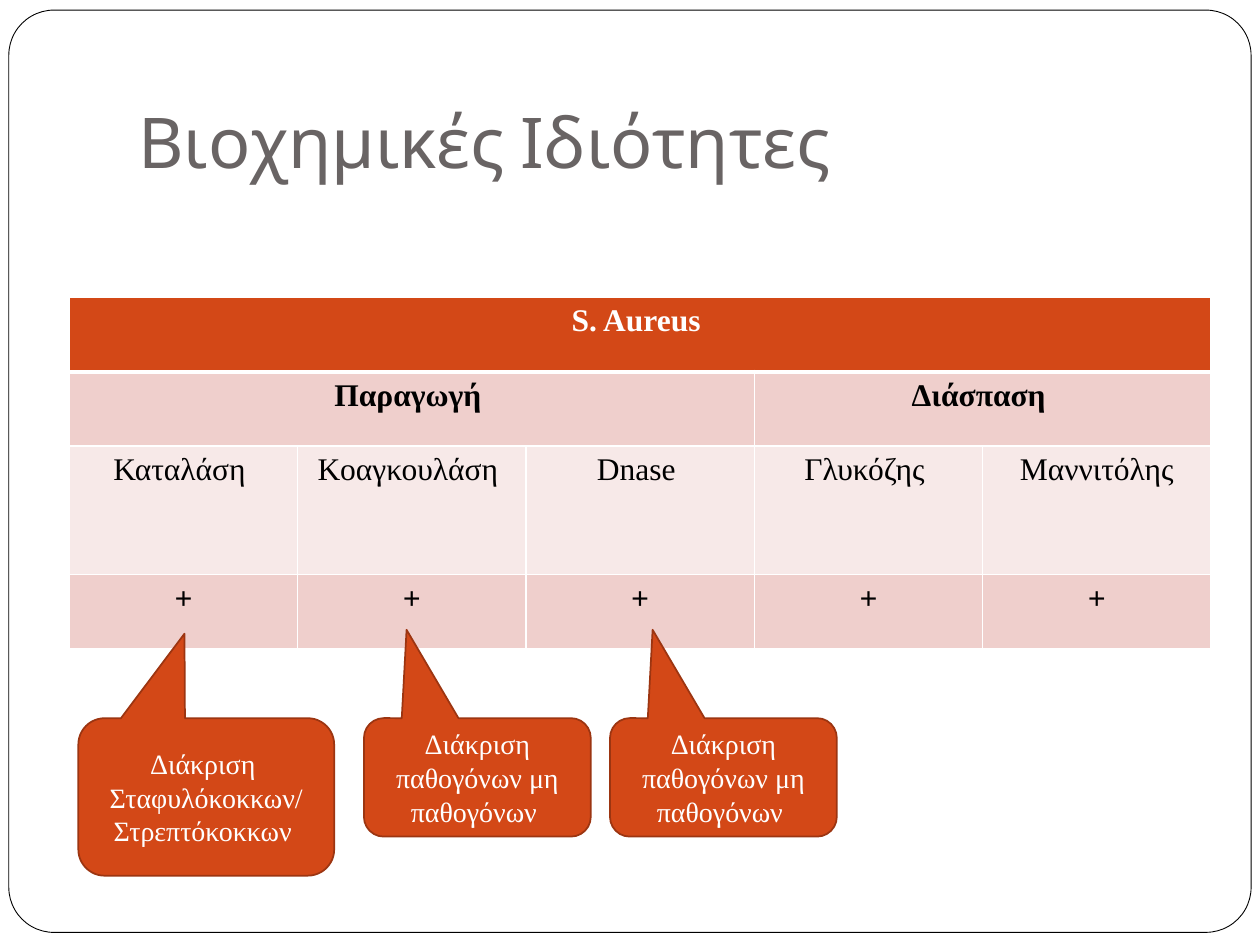
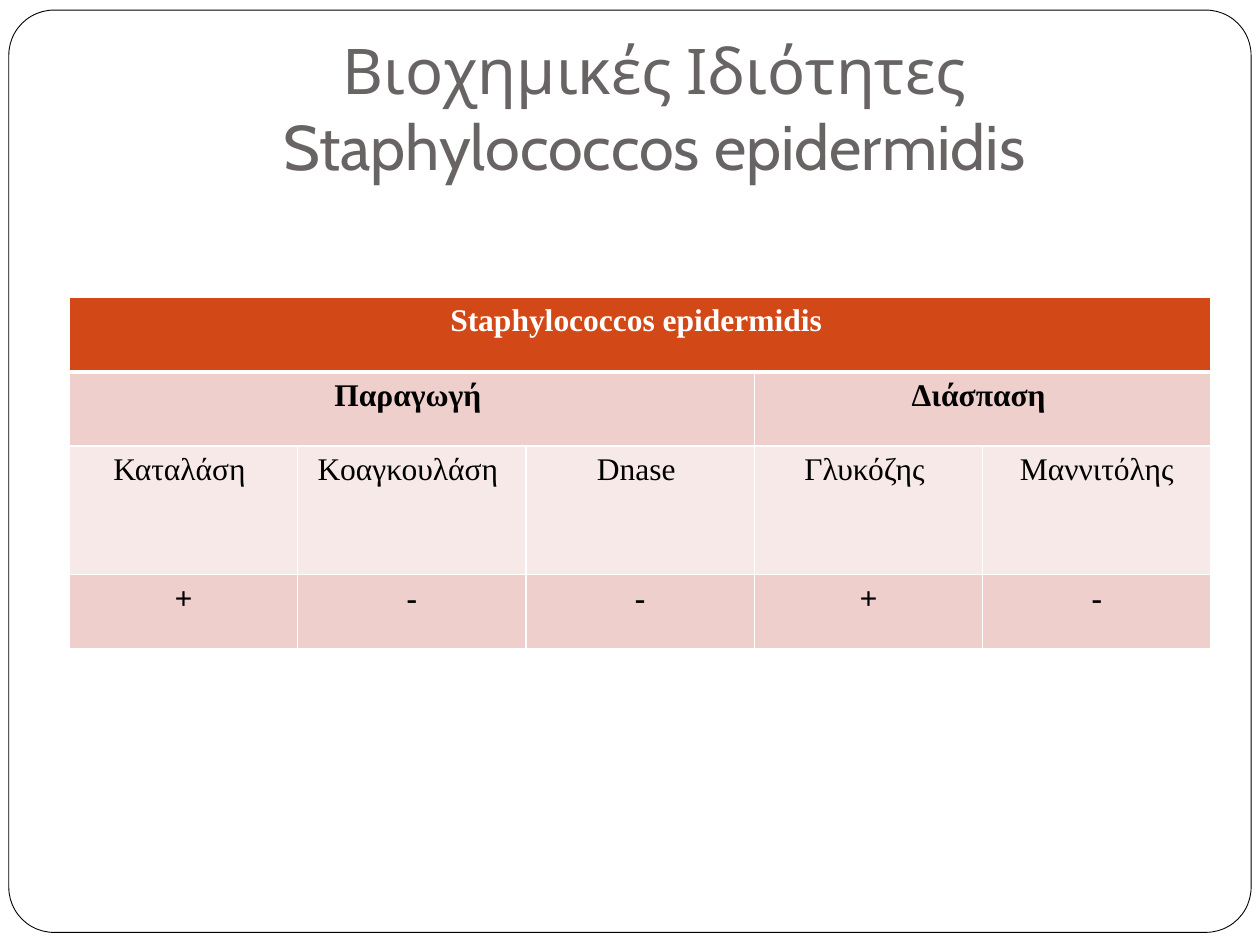
import pptx
import pptx.util
import pptx.dml.color
import pptx.enum.shapes
import pptx.enum.text
import pptx.oxml
import pptx.oxml.ns

Pt = pptx.util.Pt
ALIGN = pptx.enum.text.PP_ALIGN
ANCHOR = pptx.enum.text.MSO_ANCHOR
SHAPE = pptx.enum.shapes.MSO_SHAPE

# Shared look
HUES = {
    "white": "FFFFFF", "black": "000000", "title": "696464",
    "rust": "D34817", "edge": "9C3511", "pink": "EFCFCC", "pale": "F7E9E8",
}
HEAD, BODY = "Cabin", "Times New Roman"
FRAME = (5.04, 5.76, 709.92, 527.04)
TITLE = (72, 21.6, 612, 90)
TABLE = (39.6, 170, 652.5)
ROWS = (42.5, 42.5, 73.4, 42.5)
TESTS = ("Καταλάση ", "Κοαγκουλάση ", "Dnase ", "Γλυκόζης ", "Μαννιτόλης")


def hue(name):
    return pptx.dml.color.RGBColor.from_string(HUES[name])


def place(shape, box):
    shape.left, shape.top, shape.width, shape.height = map(Pt, box)


def write(para, text, size, color, font=BODY, bold=False, align=ALIGN.CENTER):
    """Add one run to a paragraph."""
    para.alignment = align
    run = para.add_run()
    run.text = text
    run.font.size, run.font.name, run.font.bold = Pt(size), font, bold
    run.font.color.rgb = hue(color)


def draw(slide, kind, box, fill, line, weight, adjust):
    """Add a flat preset shape."""
    shape = slide.shapes.add_shape(kind, *map(Pt, box))
    shape.shadow.inherit = False
    shape.fill.solid()
    shape.fill.fore_color.rgb = hue(fill)
    shape.line.color.rgb = hue(line)
    shape.line.width = Pt(weight)
    for i, value in enumerate(adjust):
        shape.adjustments[i] = value
    return shape


def start(deck, lines, size, align):
    """Make a slide with its frame and title."""
    slide = deck.slides.add_slide(deck.slide_layouts[5])
    title = slide.shapes.title
    frame = draw(slide, SHAPE.ROUNDED_RECTANGLE, FRAME, "white", "black", 0.5, [0.049])
    title.element.addprevious(frame.element)
    place(title, TITLE)
    text = title.text_frame
    text.auto_size = pptx.enum.text.MSO_AUTO_SIZE.NONE
    text.word_wrap = True
    text.vertical_anchor = ANCHOR.BOTTOM
    text.margin_left = text.margin_right = text.margin_bottom = Pt(7.2)
    text.margin_top = Pt(3.6)
    para = text.paragraphs[0]
    for i, line in enumerate(lines):
        if i:
            para.add_line_break()
        write(para, line, size, "title", HEAD, align=align)
    return slide


def rule(cell, sides):
    """Draw white cell borders, given as side and weight."""
    props = cell._tc.get_or_add_tcPr()
    for i, side in enumerate("LRTB"):
        line = pptx.oxml.parse_xml(
            f'<a:ln{side} {pptx.oxml.ns.nsdecls("a")} w="{Pt(sides.get(side, 1))}">'
            f'<a:solidFill><a:srgbClr val="{HUES["white"]}"/></a:solidFill></a:ln{side}>')
        props.insert(i, line)


def chart(slide, box, name, signs):
    """Add the table of test results for one species."""
    left, top, width = box
    grid = (
        (name, "", "", "", ""),
        ("Παραγωγή ", "", "", "Διάσπαση ", ""),
        TESTS,
        signs,
    )
    fills = ("rust", "pink", "pale", "pink")
    table = slide.shapes.add_table(
        len(grid), len(TESTS), Pt(left), Pt(top), Pt(width), Pt(sum(ROWS))).table
    for col in table.columns:
        col.width = Pt(width / len(TESTS))
    for r, texts in enumerate(grid):
        table.rows[r].height = Pt(ROWS[r])
        for c, text in enumerate(texts):
            cell = table.cell(r, c)
            cell.fill.solid()
            cell.fill.fore_color.rgb = hue(fills[r])
            rule(cell, {0: {"B": 3}, 1: {"T": 3}}.get(r, {}))
            if text:
                write(cell.text_frame.paragraphs[0], text, 18,
                      "black" if r else "white", bold=r != 2)
    # Group headings
    for r, c, end in ((0, 0, 4), (1, 0, 2), (1, 3, 4)):
        table.cell(r, c).merge(table.cell(r, end))


def note(slide, box, tip, lines):
    """Add a callout whose tip points at a result."""
    shape = draw(slide, SHAPE.ROUNDED_RECTANGULAR_CALLOUT, box,
                 "rust", "edge", 1, (*tip, 0.167))
    text = shape.text_frame
    text.word_wrap = True
    text.vertical_anchor = ANCHOR.MIDDLE
    for i, line in enumerate(lines):
        para = text.add_paragraph() if i else text.paragraphs[0]
        write(para, line, 16, "white")


def main():
    deck = pptx.Presentation()
    deck.slide_width, deck.slide_height = Pt(720), Pt(540)

    # S. aureus
    slide = start(deck, ["Βιοχημικές Ιδιότητες"], 40, ALIGN.LEFT)
    chart(slide, TABLE, "S. Aureus ", "+++++")
    note(slide, (44.8, 410.4, 146.2, 90), (-0.085, -1.037),
         ["Διάκριση ", "Σταφυλόκοκκων/Στρεπτόκοκκων "])
    for left in (208, 348.6):
        note(slide, (left, 410.4, 129.6, 67.7), (-0.312, -1.246),
             ["Διάκριση παθογόνων μη παθογόνων "])

    # S. epidermidis
    name = "Staphylococcos epidermidis "
    slide = start(deck, ["Βιοχημικές Ιδιότητες ", name], 36, ALIGN.CENTER)
    chart(slide, TABLE, name, "+--+-")

    deck.save("out.pptx")


if __name__ == "__main__":
    main()
